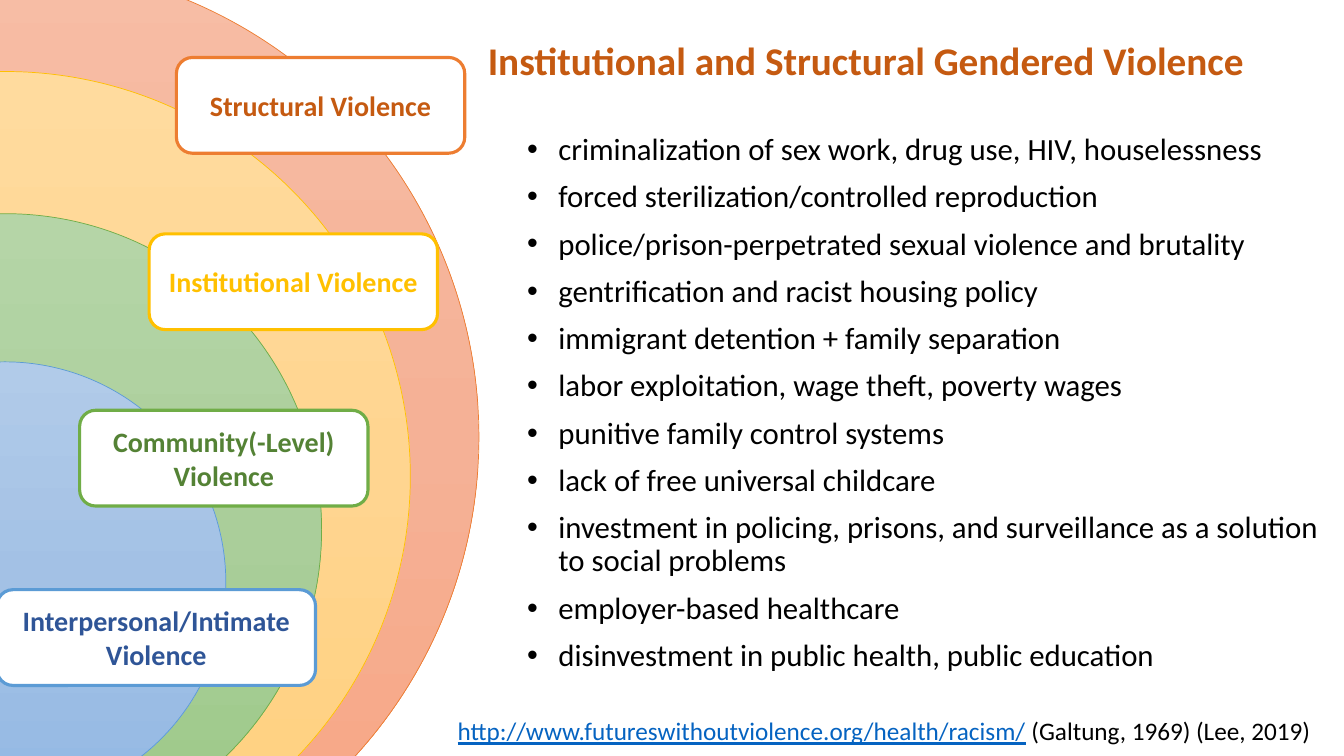
from copy import deepcopy
from dataclasses import dataclass

from pptx import Presentation
from pptx.dml.color import RGBColor
from pptx.enum.shapes import MSO_SHAPE
from pptx.enum.text import MSO_ANCHOR, PP_ALIGN
from pptx.oxml.ns import qn
from pptx.oxml.xmlchemy import OxmlElement
from pptx.util import Inches, Pt


@dataclass(frozen=True)
class Theme:
    font: str = "Calibri"
    title: int = 28
    body: int = 22
    label: int = 20
    source: int = 18
    ink: str = "000000"
    paper: str = "FFFFFF"
    link: str = "0563C1"
    orange: str = "ED7D31"
    dark_orange: str = "C55A11"
    gold: str = "FFC000"
    green: str = "70AD47"
    dark_green: str = "548235"
    blue: str = "5B9BD5"
    dark_blue: str = "2F5597"
    orange_fade: tuple = ("F7BDA5", "F5B196", "F8A582")
    gold_fade: tuple = ("FFDB9E", "FFD590", "FFD07C")
    green_fade: tuple = ("B5D5A7", "AACE9A", "9CC987")
    blue_fade: tuple = ("B1CBE9", "A3C1E5", "93B9E4")


theme = Theme()


def style(r, size, color, bold=False):
    r.font.name = theme.font
    r.font.size = Pt(size)
    r.font.bold = bold
    r.font.color.rgb = RGBColor.from_string(color)


def add_outlined(preset, box, color, width):
    sp = s.shapes.add_shape(preset, *map(Inches, box))
    sp.shadow.inherit = False
    sp.line.color.rgb = RGBColor.from_string(color)
    sp.line.width = Pt(width)
    return sp


prs = Presentation()
prs.slide_width, prs.slide_height = Inches(13.33), Inches(7.5)
s = prs.slides.add_slide(prs.slide_layouts[6])

# Nested circles, outermost first
circles = [
    (-4.64, -0.36, 9.39, theme.orange, theme.orange_fade),
    (-3.96, 0.71, 8.03, theme.gold, theme.gold_fade),
    (-3.08, 2.12, 6.27, theme.green, theme.green_fade),
    (-2.14, 3.59, 4.38, theme.blue, theme.blue_fade),
]
for left, top, size, color, fade in circles:
    sp = add_outlined(MSO_SHAPE.OVAL, (left, top, size, size), color, 0.5)
    sp.fill.gradient()
    sp.fill.gradient_angle = 270
    stops = sp._element.spPr.find(qn("a:gradFill")).find(qn("a:gsLst"))
    stops.insert(1, deepcopy(stops[0]))
    for stop, position, shade in zip(sp.fill.gradient_stops, (0, 0.5, 1), fade):
        stop.position = position
        stop.color.rgb = RGBColor.from_string(shade)

# Level labels
labels = [
    ("Interpersonal/Intimate Violence", -0.03, 5.85, 3.16, theme.blue, theme.dark_blue),
    ("Community(-Level) Violence", 0.79, 4.07, 2.86, theme.green, theme.dark_green),
    ("Institutional Violence", 1.48, 2.32, 2.86, theme.gold, theme.gold),
    ("Structural Violence", 1.75, 0.57, 2.86, theme.orange, theme.dark_orange),
]
for text, left, top, width, color, text_color in labels:
    sp = add_outlined(MSO_SHAPE.ROUNDED_RECTANGLE, (left, top, width, 0.95), color, 2.25)
    sp.fill.solid()
    sp.fill.fore_color.rgb = RGBColor.from_string(theme.paper)
    tf = sp.text_frame
    tf.word_wrap = True
    tf.vertical_anchor = MSO_ANCHOR.MIDDLE
    tf.text = text
    p = tf.paragraphs[0]
    p.alignment = PP_ALIGN.CENTER
    style(p.runs[0], theme.label, text_color, bold=True)

# Sources
tf = s.shapes.add_textbox(Inches(4.44), Inches(7.05), Inches(8.95), Inches(0.4)).text_frame
tf.word_wrap = True
p = tf.paragraphs[0]
for text, color, underline in [
    ("http://www.futureswithoutviolence.org/health/racism/", theme.link, True),
    (" (Galtung, 1969) (Lee, 2019)", theme.ink, False),
]:
    r = p.add_run()
    r.text = text
    style(r, theme.source, color)
    r.font.underline = underline

# Examples
examples = [
    "criminalization of sex work, drug use, HIV, houselessness",
    "forced sterilization/controlled reproduction",
    "police/prison-perpetrated sexual violence and brutality",
    "gentrification and racist housing policy",
    "immigrant detention + family separation",
    "labor exploitation, wage theft, poverty wages",
    "punitive family control systems",
    "lack of free universal childcare",
    "investment in policing, prisons, and surveillance as a solution to social problems",
    "employer-based healthcare",
    "disinvestment in public health, public education",
]
tf = s.shapes.add_textbox(Inches(5.12), Inches(1.28), Inches(8.07), Inches(5.19)).text_frame
tf.word_wrap = True
tf.text = "\n".join(examples)
for i, p in enumerate(tf.paragraphs):
    p.line_spacing = 0.9
    p.space_before = Pt(10 if i else 0)
    pPr = p._p.get_or_add_pPr()
    pPr.set("marL", str(Inches(0.32)))
    pPr.set("indent", str(Inches(-0.31)))
    bullet_font = OxmlElement("a:buFont")
    bullet_font.set("typeface", "Arial")
    bullet = OxmlElement("a:buChar")
    bullet.set("char", "•")
    pPr.extend([bullet_font, bullet])
    style(p.runs[0], theme.body, theme.ink)

# Title
tf = s.shapes.add_textbox(Inches(4.74), Inches(0.29), Inches(8.59), Inches(0.66)).text_frame
tf.word_wrap = True
tf.vertical_anchor = MSO_ANCHOR.MIDDLE
tf.text = "Institutional and Structural Gendered Violence"
p = tf.paragraphs[0]
p.line_spacing = 0.9
style(p.runs[0], theme.title, theme.dark_orange, bold=True)

prs.save("out.pptx")
